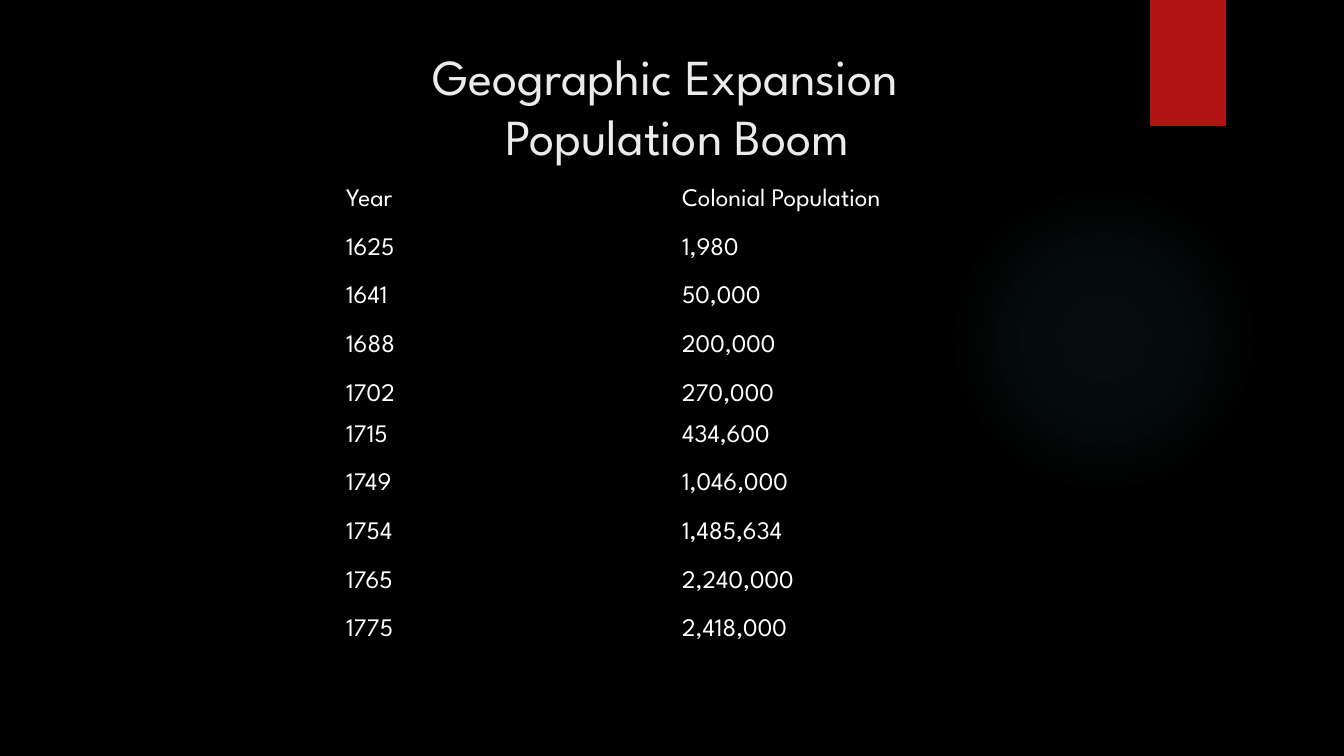
import dataclasses

import lxml.etree
import pptx
import pptx.dml.color
import pptx.enum.shapes
import pptx.enum.text
import pptx.oxml
import pptx.oxml.ns
import pptx.util

FONT = "League Spartan"
SHAPE = pptx.enum.shapes.MSO_SHAPE
ANCHOR = pptx.enum.text.MSO_ANCHOR
NS = pptx.oxml.ns.nsdecls("a")


@dataclasses.dataclass
class Box:
    left: int
    top: int
    width: int
    height: int

    def emu(self) -> list[int]:
        return [px(side) for side in dataclasses.astuple(self)]


@dataclasses.dataclass
class Count:
    year: str
    people: str
    anchor: ANCHOR = ANCHOR.MIDDLE


ROWS = [
    Count("Year", "Colonial Population"),
    Count("1625", "1,980"),
    Count("1641", "50,000"),
    Count("1688", "200,000"),
    Count("1702", "270,000"),
    Count("1715", "434,600", ANCHOR.TOP),
    Count("1749", "1,046,000", ANCHOR.TOP),
    Count("1754", "1,485,634", ANCHOR.TOP),
    Count("1765", "2,240,000", ANCHOR.TOP),
    Count("1775", "2,418,000", ANCHOR.TOP),
]


def px(size: int) -> int:
    return round(size * 914400 / 100.8)


def color(code: str) -> pptx.dml.color.RGBColor:
    return pptx.dml.color.RGBColor.from_string(code)


def style(frame, size: int, code: str) -> None:
    for para in frame.paragraphs:
        for run in para.runs:
            run.font.name = FONT
            run.font.size = pptx.util.Pt(size)
            run.font.bold = False
            run.font.color.rgb = color(code)


def shape(slide, kind: SHAPE, box: Box, code: str):
    item = slide.shapes.add_shape(kind, *box.emu())
    item.shadow.inherit = False
    item.fill.solid()
    item.fill.fore_color.rgb = color(code)
    item.line.fill.background()
    return item


def glow(slide, box: Box, code: str) -> None:
    item = shape(slide, SHAPE.OVAL, box, code)
    stops = "".join(
        f'<a:gs pos="{pos * 1000}"><a:srgbClr val="{code}">'
        f'<a:alpha val="{alpha * 1000}"/></a:srgbClr></a:gs>'
        for pos, alpha in ((0, 7), (36, 6), (69, 0))
    )
    grad = pptx.oxml.parse_xml(
        f'<a:gradFill {NS} rotWithShape="1"><a:gsLst>{stops}</a:gsLst>'
        '<a:path path="circle"><a:fillToRect l="50000" t="50000" '
        'r="50000" b="50000"/></a:path></a:gradFill>'
    )
    props = item.fill._xPr
    props.replace(props.find(pptx.oxml.ns.qn("a:solidFill")), grad)


def title(slide, box: Box) -> None:
    head = slide.shapes.title
    head.left, head.top, head.width, head.height = box.emu()
    frame = head.text_frame
    frame.text = "Geographic Expansion \n Population Boom"
    frame.word_wrap = True
    frame.auto_size = pptx.enum.text.MSO_AUTO_SIZE.NONE
    frame.vertical_anchor = ANCHOR.MIDDLE
    for para in frame.paragraphs:
        para.alignment = pptx.enum.text.PP_ALIGN.CENTER
    style(frame, 36, "EBEBEB")


def clear(cell) -> None:
    props = cell._tc.get_or_add_tcPr()
    for side in ("lnL", "lnR", "lnT", "lnB"):
        line = lxml.etree.SubElement(props, pptx.oxml.ns.qn(f"a:{side}"))
        lxml.etree.SubElement(line, pptx.oxml.ns.qn("a:noFill"))
    cell.fill.background()


def table(slide, box: Box, rows: list[Count]) -> None:
    grid = slide.shapes.add_table(len(rows), 2, *box.emu()).table
    grid.first_row = False
    grid.horz_banding = False
    for index, row in enumerate(rows):
        for col, text in enumerate((row.year, row.people)):
            cell = grid.cell(index, col)
            clear(cell)
            cell.vertical_anchor = row.anchor
            cell.text_frame.text = text
            style(cell.text_frame, 18, "FFFFFF")


def main() -> None:
    deck = pptx.Presentation()
    deck.slide_width, deck.slide_height = px(1344), px(756)
    slide = deck.slides.add_slide(deck.slide_layouts[5])
    slide.background.fill.solid()
    slide.background.fill.fore_color.rgb = color("000000")
    glow(slide, Box(949, 184, 310, 310), "50B9C1")
    shape(slide, SHAPE.RECTANGLE, Box(1150, 0, 76, 126), "B01513")
    title(slide, Box(218, 34, 907, 143))
    table(slide, Box(336, 176, 672, 487), ROWS)
    deck.save("out.pptx")


if __name__ == "__main__":
    main()
